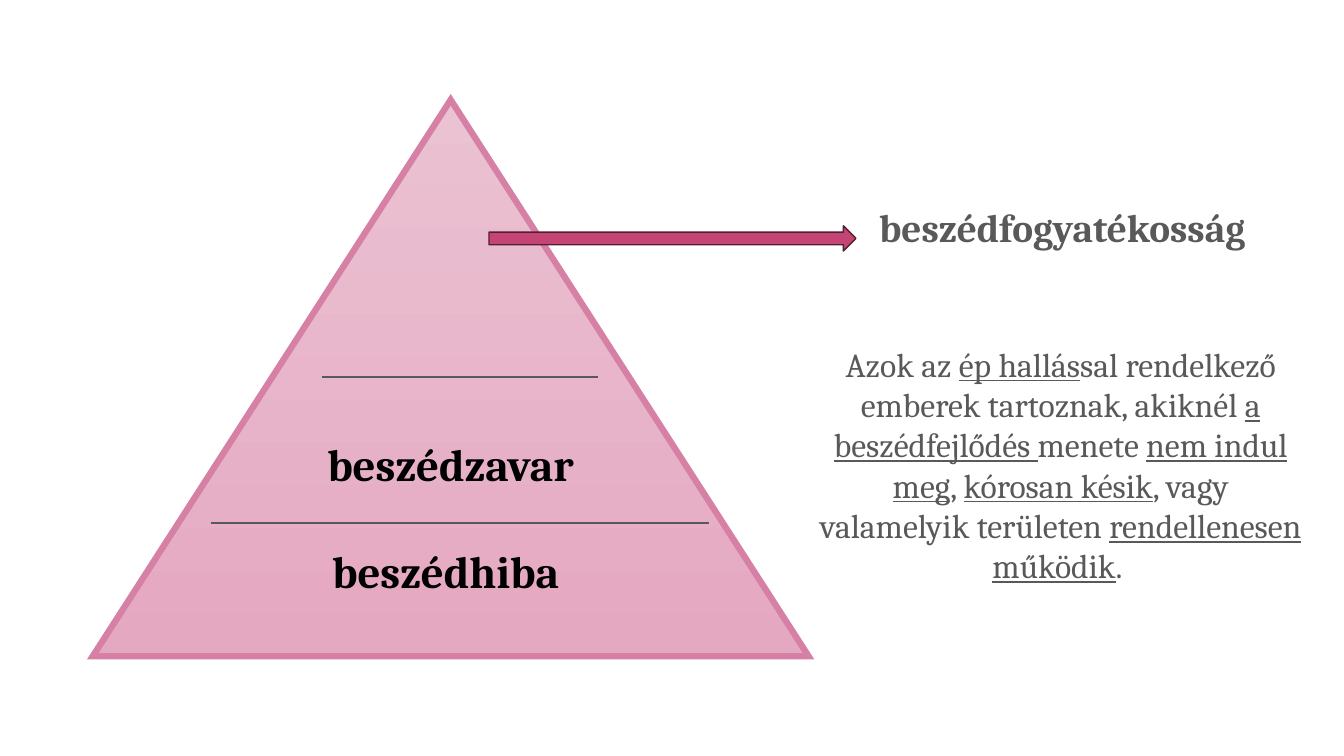
from lxml import etree
from pptx import Presentation
from pptx.dml.color import RGBColor
from pptx.enum.shapes import MSO_CONNECTOR, MSO_SHAPE
from pptx.enum.text import MSO_ANCHOR, MSO_AUTO_SIZE, PP_ALIGN
from pptx.oxml.ns import qn
from pptx.util import Pt

PX = 9144  # 100 px to the inch
FONT = "Cambria"
GREY = "595959"
TRIANGLE, ARROW = MSO_SHAPE.ISOSCELES_TRIANGLE, MSO_SHAPE.RIGHT_ARROW
STRAIGHT = MSO_CONNECTOR.STRAIGHT
CENTER, LEFT = PP_ALIGN.CENTER, PP_ALIGN.LEFT
TOP, MIDDLE = MSO_ANCHOR.TOP, MSO_ANCHOR.MIDDLE


def rgb(value):
    return RGBColor.from_string(value)


def set_font(font, size, color, bold=False):
    font.name, font.size, font.bold = FONT, Pt(size), bold
    font.color.rgb = rgb(color)


prs = Presentation()
prs.slide_width, prs.slide_height = 1333 * PX, 750 * PX
slide = prs.slides.add_slide(prs.slide_layouts[5])
shapes = slide.shapes

# Pyramid with its two lower levels
sp = shapes.add_shape(TRIANGLE, 92 * PX, 99 * PX, 710 * PX, 552 * PX)
sp.shadow.inherit = False
sp.fill.gradient()
sp.fill.gradient_angle = 270
for stop, color in zip(sp.fill.gradient_stops, ("EBC2D2", "E4A8C1")):
    stop.color.rgb = rgb(color)
sp.line.color.rgb = rgb("D680A5")
sp.line.width = Pt(4.5)
miter = etree.SubElement(sp.line._get_or_add_ln(), qn("a:miter"))
miter.set("lim", "800000")
tf = sp.text_frame
tf.word_wrap = True
tf.vertical_anchor = MIDDLE
tf.text = "beszédzavar\nbeszédhiba "
for p in tf.paragraphs:
    p.alignment = CENTER
    set_font(p.runs[0].font, 32, "000000", bold=True)
tf.paragraphs[1].space_before = Pt(38)

# Dividers between the levels
for x1, x2, y in ((209, 703, 519), (319, 593, 374)):
    divider = shapes.add_connector(STRAIGHT, x1 * PX, y * PX, x2 * PX, y * PX)
    divider.line.color.rgb = rgb(GREY)
    divider.line.width = Pt(1.5)
    etree.SubElement(divider._element.spPr, qn("a:effectLst"))

# Arrow from the top level to its name
sp = shapes.add_shape(ARROW, 485 * PX, 224 * PX, 364 * PX, 25 * PX)
sp.shadow.inherit = False
sp.fill.solid()
sp.fill.fore_color.rgb = rgb("C44475")
sp.line.color.rgb = rgb("561E33")
sp.line.width = Pt(1)

# Name of the top level
title = shapes.title
title.left, title.top, title.width, title.height = 862 * PX, 197 * PX, 454 * PX, 57 * PX
tf = title.text_frame
tf.text = "beszédfogyatékosság"
tf.word_wrap = True
tf.auto_size = MSO_AUTO_SIZE.SHAPE_TO_FIT_TEXT
tf.vertical_anchor = TOP
p = tf.paragraphs[0]
p.alignment = LEFT
set_font(p.runs[0].font, 28, GREY, bold=True)

# Definition: plain and underlined pieces alternate
pieces = (
    "Azok az ", "ép hallás",
    "sal rendelkező emberek tartoznak, akiknél ", "a beszédfejlődés ",
    "menete ", "nem indul meg",
    ", ", "kórosan késik",
    ", vagy valamelyik területen ", "rendellenesen működik",
    ". ",
)
definition = shapes.add_textbox(803 * PX, 336 * PX, 498 * PX, 252 * PX)
tf = definition.text_frame
tf.word_wrap = True
tf.auto_size = MSO_AUTO_SIZE.SHAPE_TO_FIT_TEXT
p = tf.paragraphs[0]
p.alignment = CENTER
for i, piece in enumerate(pieces):
    r = p.add_run()
    r.text = piece
    set_font(r.font, 24, GREY)
    r.font.underline = i % 2 == 1

prs.save("out.pptx")
